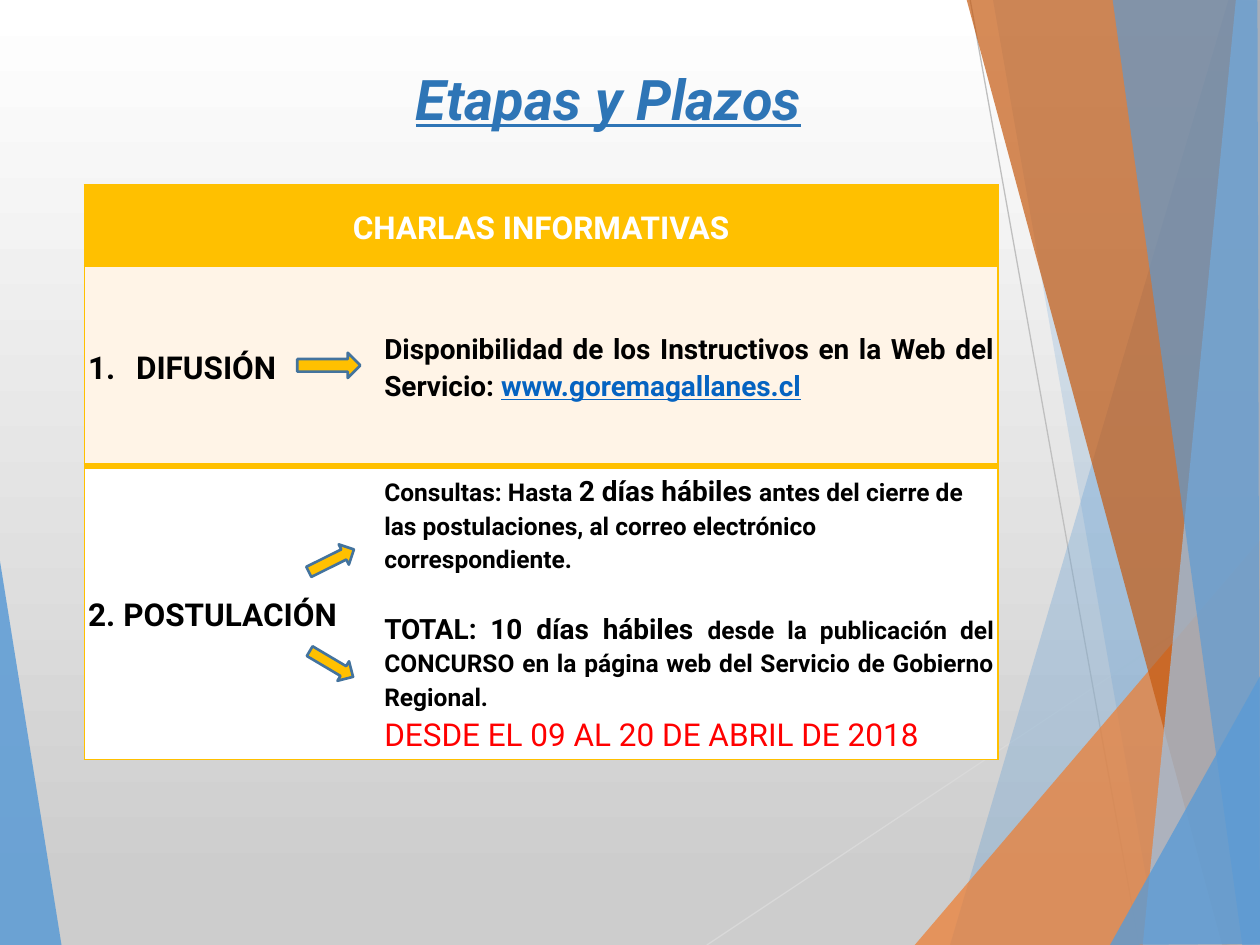
from dataclasses import dataclass, field

from lxml.etree import SubElement
from pptx import Presentation
from pptx.dml.color import RGBColor
from pptx.enum.shapes import MSO_CONNECTOR, MSO_SHAPE
from pptx.enum.text import MSO_ANCHOR, MSO_AUTO_SIZE, PP_ALIGN
from pptx.oxml import parse_xml
from pptx.oxml.ns import nsdecls, qn
from pptx.util import Inches, Pt

FONT = "Roboto"
GOLD = "FFC000"
BLUE = "5B9BD5"
BLACK = "000000"
CREAM = "FFF4E7"
WHITE = "FFFFFF"


@dataclass
class Facet:
    color: str
    alpha: int
    points: list[tuple[float, float]]


@dataclass
class Line:
    color: str
    start: tuple[float, float]
    end: tuple[float, float]


@dataclass
class Arrow:
    box: tuple[float, float, float, float]
    rotation: float = 0


@dataclass
class Run:
    text: str
    size: float
    color: str = BLACK
    fmt: dict = field(default_factory=lambda: {"bold": True})


@dataclass
class Para:
    runs: list[Run]
    fmt: dict = field(default_factory=dict)
    numbered: bool = False


@dataclass
class Cell:
    row: int
    col: int
    fill: str
    borders: dict[str, float]
    paras: list[Para]


CENTER = {"alignment": PP_ALIGN.CENTER}
JUSTIFY = {"alignment": PP_ALIGN.JUSTIFY}

BACKDROP = [
    Facet(BLUE, 85, [(-0.01, 4.39), (0.49, 7.51), (-0.01, 7.5)]),
    Line("D9D9D9", (5.61, 7.5), (10.01, 4.57)),
    Line("BFBFBF", (7.7, 0), (9.04, 7.5)),
    Facet(BLUE, 30, [(9.75, 0), (7.54, 7.5), (10.02, 7.51), (10.01, 0.01)]),
    Facet(BLUE, 20, [(7.88, -0.01), (9.19, 7.5), (10.01, 7.5), (10.01, -0.01)]),
    Facet("ED7D31", 72, [(7.26, 7.5), (10, 4.29), (10.01, 7.5)]),
    Facet("C55A11", 70, [(7.67, -0.01), (9.7, 7.5), (10.01, 7.49), (10.01, -0.01)]),
    Facet("9DC3E6", 70, [(9.81, -0.01), (9.07, 7.5), (10.01, 7.5), (10, -0.01)]),
    Facet(BLUE, 65, [(8.83, -0.01), (9.86, 7.5), (10, 7.5), (9.98, -0.01)]),
    Facet(BLUE, 80, [(8.81, 7.5), (10.01, 5.35), (10.01, 7.49)]),
]

ARROWS = [
    Arrow((2.43, 4.36, 0.4, 0.18), 333.6),
    Arrow((2.36, 2.8, 0.5, 0.2)),
    Arrow((2.43, 5.18, 0.4, 0.18), 30.7),
]

TITLE = Para(
    [Run("Etapas y Plazos", 32, "2E75B6", {"bold": True, "italic": True, "underline": True})],
    CENTER | {"line_spacing": 0.9},
)

CELLS = [
    Cell(0, 0, GOLD, {"L": 1, "R": 1, "T": 1, "B": 1}, [
        Para([Run("CHARLAS INFORMATIVAS", 18, WHITE)], CENTER)]),
    Cell(1, 0, CREAM, {"L": 1, "R": 0, "T": 1, "B": 4}, [
        Para([Run("DIFUSIÓN", 18)], numbered=True)]),
    Cell(1, 1, CREAM, {"L": 0, "R": 1, "T": 1, "B": 4}, [
        Para([
            Run("Disponibilidad de los Instructivos en la Web del Servicio: ", 16),
            Run("www.goremagallanes.cl", 16, "0563C1", {"bold": True, "underline": True}),
        ], JUSTIFY)]),
    Cell(2, 0, WHITE, {"L": 1, "R": 0, "T": 4, "B": 1}, [
        Para([Run("2. POSTULACIÓN", 18)])]),
    Cell(2, 1, WHITE, {"L": 0, "R": 1, "T": 4, "B": 1}, [
        Para([
            Run("Consultas: Hasta ", 14),
            Run("2 días hábiles ", 16),
            Run("antes del cierre de las postulaciones, al correo electrónico correspondiente.", 14),
        ]),
        Para([
            Run("TOTAL: 10 días hábiles ", 16),
            Run("desde la publicación del CONCURSO en la página web del Servicio de Gobierno Regional.", 14),
        ], JUSTIFY | {"space_before": Pt(19)}),
        Para([Run("DESDE EL 09 AL 20 DE ABRIL DE 2018", 18, "FF0000", {"bold": False})], JUSTIFY),
    ]),
]


def rgb(color: str) -> RGBColor:
    return RGBColor.from_string(color)


def set_attrs(target, values: dict) -> None:
    for name, value in values.items():
        setattr(target, name, value)


def paint(fill, color: str) -> None:
    fill.solid()
    fill.fore_color.rgb = rgb(color)


def add_facet(s, facet: Facet) -> None:
    points = [(Inches(x), Inches(y)) for x, y in facet.points]
    builder = s.shapes.build_freeform(*points[0])
    builder.add_line_segments(points[1:], close=True)
    sp = builder.convert_to_shape()
    sp.shadow.inherit = False
    paint(sp.fill, facet.color)
    sp.line.fill.background()
    clr = next(sp.element.spPr.iter(qn("a:srgbClr")))
    SubElement(clr, qn("a:alpha"), val=str(facet.alpha * 1000))


def add_line(s, line: Line) -> None:
    ends = [Inches(v) for v in line.start + line.end]
    sp = s.shapes.add_connector(MSO_CONNECTOR.STRAIGHT, *ends)
    sp.line.color.rgb = rgb(line.color)
    sp.line.width = Pt(0.75)
    SubElement(sp.element.spPr, qn("a:effectLst"))


def add_arrow(s, arrow: Arrow) -> None:
    sp = s.shapes.add_shape(MSO_SHAPE.RIGHT_ARROW, *map(Inches, arrow.box))
    sp.shadow.inherit = False
    sp.rotation = arrow.rotation
    paint(sp.fill, GOLD)
    sp.line.color.rgb = rgb("43739E")
    sp.line.width = Pt(1.5)


def write(tf, paras: list[Para]) -> None:
    for i, para in enumerate(paras):
        p = tf.add_paragraph() if i else tf.paragraphs[0]
        set_attrs(p, {"line_spacing": 1.15} | para.fmt)
        if para.numbered:
            pPr = p._p.get_or_add_pPr()
            pPr.set("marL", str(Inches(0.38)))
            pPr.set("indent", str(Inches(-0.38)))
            SubElement(pPr, qn("a:buFont"), typeface="+mj-lt")
            SubElement(pPr, qn("a:buAutoNum"), type="arabicPeriod")
        for run in para.runs:
            r = p.add_run()
            r.text = run.text
            set_attrs(r.font, {"name": FONT, "size": Pt(run.size)} | run.fmt)
            r.font.color.rgb = rgb(run.color)


def set_borders(cell, borders: dict[str, float]) -> None:
    tcPr = cell._tc.get_or_add_tcPr()
    for i, (side, width) in enumerate(borders.items()):
        fill = f'<a:solidFill><a:srgbClr val="{GOLD}"/></a:solidFill>' if width else "<a:noFill/>"
        tcPr.insert(i, parse_xml(f'<a:ln{side} {nsdecls("a")} w="{Pt(width)}">{fill}</a:ln{side}>'))


def add_stages(s) -> None:
    table = s.shapes.add_table(3, 2, *map(Inches, (0.67, 1.47, 7.25, 4.56))).table
    set_attrs(table, {"first_row": False, "horz_banding": False})
    for column, width in zip(table.columns, (2.35, 4.9)):
        column.width = Inches(width)
    for row, height in zip(table.rows, (0.64, 1.59, 2.33)):
        row.height = Inches(height)
    table.cell(0, 0).merge(table.cell(0, 1))
    margins = {"margin_left": Inches(0.03), "margin_right": Inches(0.03), "margin_top": 0, "margin_bottom": 0}
    for item in CELLS:
        cell = table.cell(item.row, item.col)
        set_attrs(cell, margins | {"vertical_anchor": MSO_ANCHOR.MIDDLE})
        paint(cell.fill, item.fill)
        set_borders(cell, item.borders)
        write(cell.text_frame, item.paras)


def main() -> None:
    prs = Presentation()
    set_attrs(prs, {"slide_width": Inches(10), "slide_height": Inches(7.5)})
    s = prs.slides.add_slide(prs.slide_layouts[6])
    fill = s.background.fill
    fill.gradient()
    fill.gradient_angle = 270
    for stop, (position, color) in zip(fill.gradient_stops, ((0, WHITE), (0.94, "CDCDCD"))):
        stop.position = position
        stop.color.rgb = rgb(color)
    for item in BACKDROP:
        (add_facet if isinstance(item, Facet) else add_line)(s, item)
    tf = s.shapes.add_textbox(*map(Inches, (0.93, 0.52, 7.8, 0.59))).text_frame
    set_attrs(tf, {"word_wrap": True, "auto_size": MSO_AUTO_SIZE.SHAPE_TO_FIT_TEXT})
    write(tf, [TITLE])
    add_stages(s)
    for arrow in ARROWS:
        add_arrow(s, arrow)
    prs.save("out.pptx")


if __name__ == "__main__":
    main()
